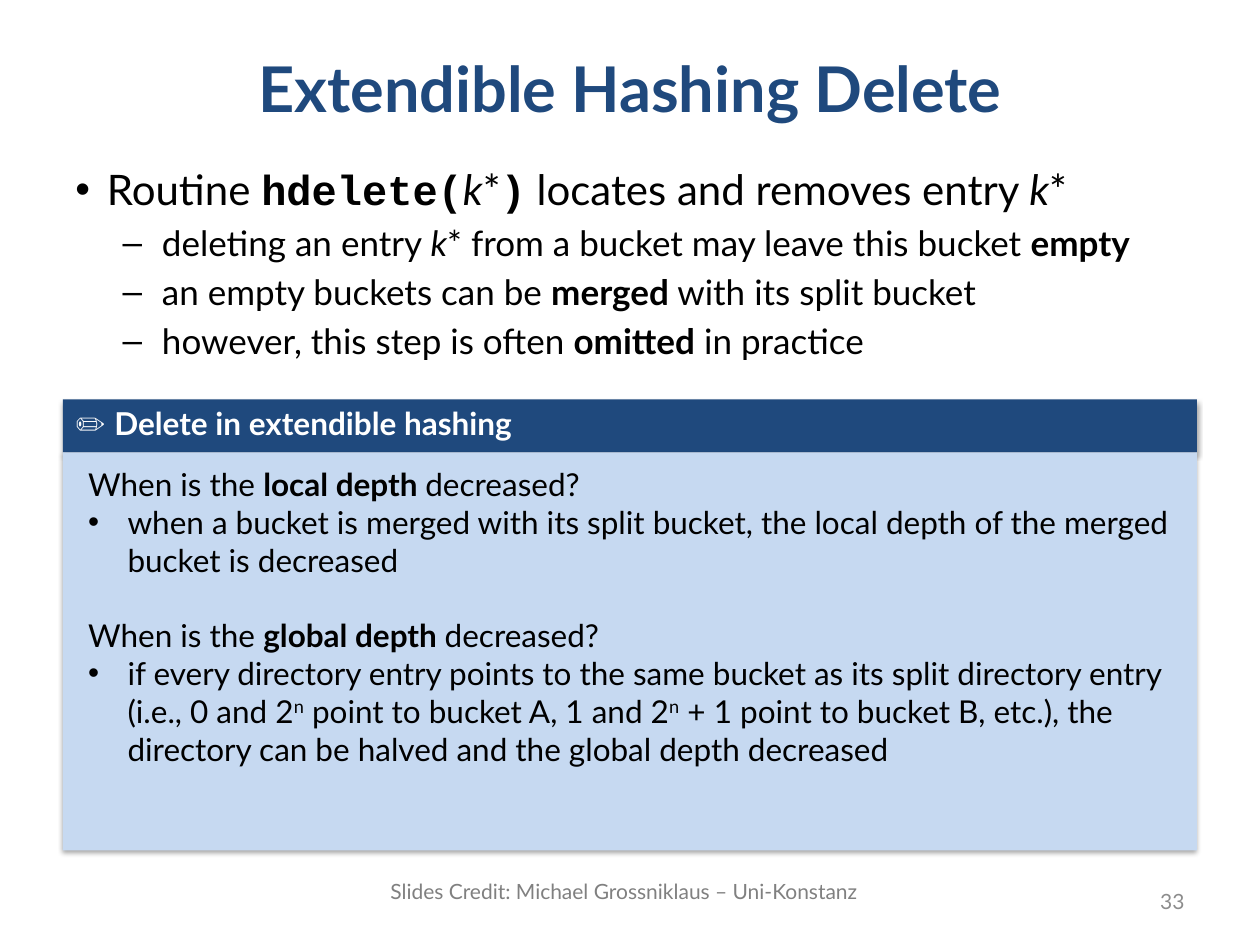
"""Build the slide on deleting from an extendible hash index."""
from lxml.etree import SubElement
from pptx import Presentation
from pptx.dml.color import RGBColor
from pptx.enum.shapes import MSO_SHAPE as Shape
from pptx.enum.text import MSO_ANCHOR as Anchor, PP_ALIGN as Align
from pptx.oxml import parse_xml
from pptx.oxml.ns import qn
from pptx.util import Pt

COLORS = {"navy": "1F497D", "pale": "C6D9F1", "black": "000000", "white": "FFFFFF",
          "number": "8C8C8C", "credit": "808080"}
LEFT, WIDTH = 36, 648
HEADER_TOP, PANEL_TOP, PANEL_BOTTOM = 228.24, 258.48, 486
INSETS = (7.2, 3.6, 7.2, 3.6)

LEVELS = {
    "main": {"size": 24, "bullet": "•", "margin": 18, "hang": 18, "before": 4.8},
    "sub": {"size": 20, "bullet": "–", "margin": 49.5, "hang": 22.5, "before": 4},
    "question": {"size": 18},
    "next question": {"size": 18, "before": 21.6},
    "answer": {"size": 18, "bullet": "•", "margin": 22.5, "hang": 22.5},
    "title": {"size": 36, "align": Align.CENTER},
    "header": {"size": 18},
    "number": {"size": 12, "align": Align.RIGHT},
    "credit": {"size": 12},
}
TITLE = [("title", [("Extendible Hashing Delete", "bold")])]
ROUTINE = [
    ("main", [("Routine ", ""), ("hdelete(", "code"), ("k", "italic"), ("*", ""), (")", "code"),
              (" locates and removes entry ", ""), ("k", "italic"), ("*", "")]),
    ("sub", [("deleting an entry ", ""), ("k", "italic"),
             ("* from a bucket may leave this bucket ", ""), ("empty", "bold")]),
    ("sub", [("an empty buckets can be ", ""), ("merged", "bold"), (" with its split bucket", "")]),
    ("sub", [("however, this step is often ", ""), ("omitted", "bold"), (" in practice", "")]),
]
HEADER = [("header", [("✏ ", "symbol"), ("Delete in extendible hashing", "bold")])]
QUESTIONS = [
    ("question", [("When is the ", ""), ("local depth ", "bold"), ("decreased?", "")]),
    ("answer", [("when a bucket is merged with its split bucket, the local depth of the merged "
                 "bucket is decreased", "")]),
    ("next question", [("When is the ", ""), ("global depth ", "bold"), ("decreased?", "")]),
    ("answer", [("if every directory entry points to the same bucket as its split directory entry "
                 "(i.e., 0 and 2", ""), ("n", "super"), (" point to bucket A, 1 and 2", ""),
                ("n", "super"), (" + 1 point to bucket B, etc.), the directory can be halved "
                                 "and the global depth decreased", "")]),
]
NUMBER = [("number", [("33", "")])]
CREDIT = [("credit", [("Slides Credit: Michael Grossniklaus – Uni-Konstanz", "")])]
FONTS = {"code": "Courier New", "symbol": "Arial"}
SHADOW = ('<a:effectLst xmlns:a="http://schemas.openxmlformats.org/drawingml/2006/main">'
          '<a:outerShdw blurRad="39370" dist="22860" dir="5400000" rotWithShape="0">'
          '<a:srgbClr val="000000"><a:alpha val="35000"/></a:srgbClr>'
          '</a:outerShdw></a:effectLst>')


def rgb(name):
    return RGBColor.from_string(COLORS[name])


def add_bullet(paragraph, level):
    properties = paragraph._p.get_or_add_pPr()
    properties.set("marL", str(Pt(level["margin"])))
    properties.set("indent", str(-Pt(level["hang"])))
    SubElement(properties, qn("a:buFont")).set("typeface", "Arial")
    SubElement(properties, qn("a:buChar")).set("char", level["bullet"])


def write(shape, content, color, anchor=Anchor.TOP, insets=INSETS):
    frame = shape.text_frame
    frame.word_wrap = True
    frame.vertical_anchor = anchor
    frame.margin_left, frame.margin_top, frame.margin_right, frame.margin_bottom = map(Pt, insets)
    for index, (level_name, pieces) in enumerate(content):
        level = LEVELS[level_name]
        paragraph = frame.add_paragraph() if index else frame.paragraphs[0]
        paragraph.alignment = level.get("align", Align.LEFT)
        paragraph.space_before = Pt(level.get("before", 0))
        if "bullet" in level:
            add_bullet(paragraph, level)
        for text, style in pieces:
            run = paragraph.add_run()
            run.text = text
            font = run.font
            font.name, font.size = FONTS.get(style, "Lato"), Pt(level["size"])
            font.bold, font.italic = style in ("bold", "code"), style == "italic"
            font.color.rgb = rgb(color)
            if style == "super":
                run._r.get_or_add_rPr().set("baseline", "30000")


def add_text(slide, box, *text_options):
    write(slide.shapes.add_textbox(*map(Pt, box)), *text_options)


def add_panel(slide, top, bottom, fill, *text_options):
    box = (LEFT, top, WIDTH, bottom - top)
    shape = slide.shapes.add_shape(Shape.RECTANGLE, *map(Pt, box))
    shape.fill.solid()
    shape.fill.fore_color.rgb = rgb(fill)
    shape.line.fill.background()
    shape._element.spPr.append(parse_xml(SHADOW))
    write(shape, *text_options)


def main():
    presentation = Presentation()
    presentation.slide_width, presentation.slide_height = Pt(720), Pt(540)
    slide = presentation.slides.add_slide(presentation.slide_layouts[6])
    add_text(slide, (LEFT, 21.6, WIDTH, 56.16), TITLE, "navy", Anchor.MIDDLE)
    add_text(slide, (LEFT, 90, WIDTH, 396), ROUTINE, "black")
    add_text(slide, (516.24, 500.4, 167.76, 28.8), NUMBER, "number", Anchor.MIDDLE)
    add_panel(slide, HEADER_TOP, PANEL_TOP, "navy", HEADER, "white", Anchor.MIDDLE,
              (7.2, 0, 7.2, 3.6))
    add_panel(slide, PANEL_TOP, PANEL_BOTTOM, "pale", QUESTIONS, "black", Anchor.TOP,
              (14.4, 7.2, 7.2, 7.2))
    add_text(slide, (216, 498.24, 293.76, 21.6), CREDIT, "credit")
    presentation.save("out.pptx")


if __name__ == "__main__":
    main()
